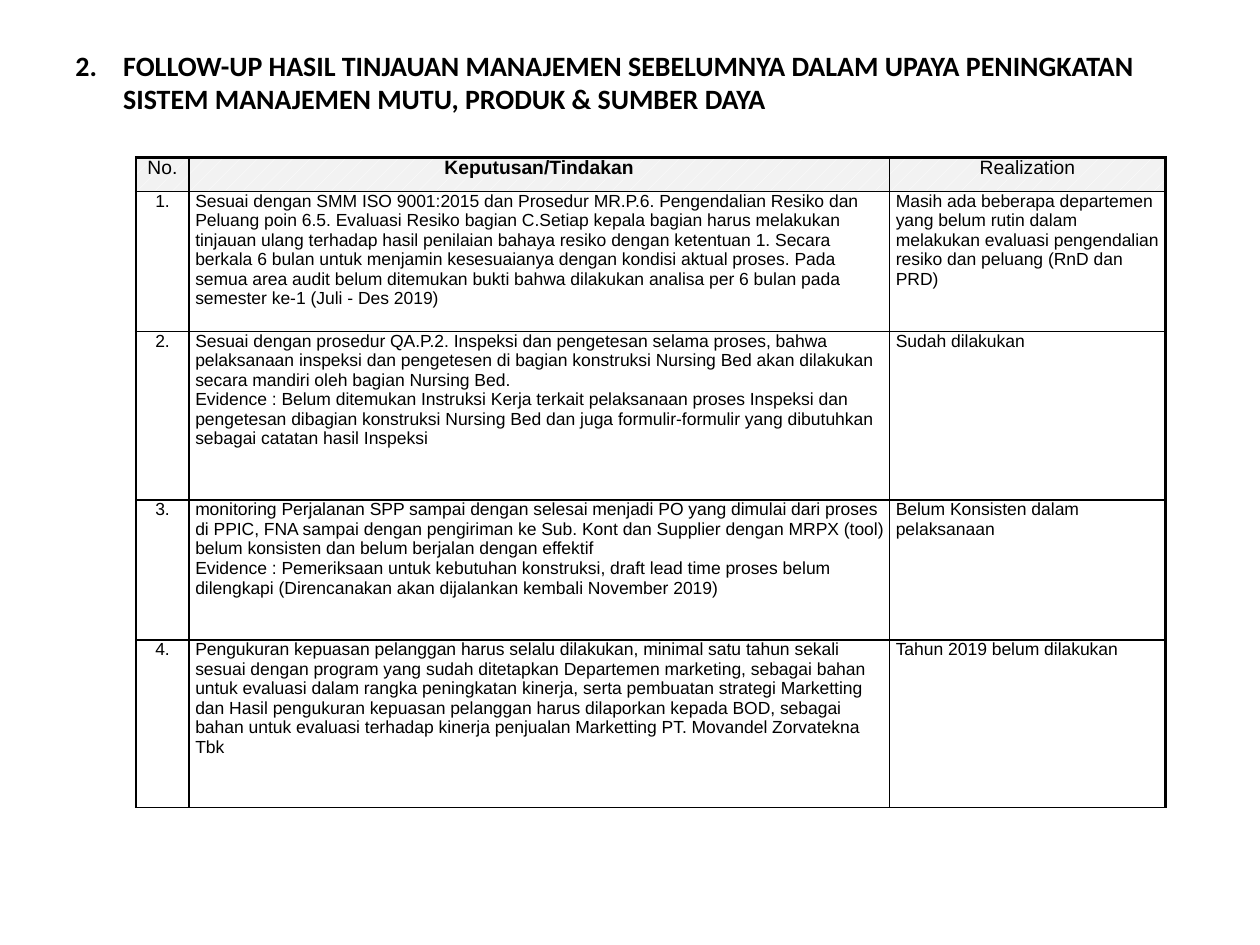
import pptx
import pptx.dml.color
import pptx.enum.dml
import pptx.enum.text
import pptx.oxml
import pptx.util
from pptx.oxml.ns import nsdecls
from pptx.util import Inches, Pt

BLACK = pptx.dml.color.RGBColor(0x00, 0x00, 0x00)
WHITE = pptx.dml.color.RGBColor(0xFF, 0xFF, 0xFF)
HEADER_GREY = pptx.dml.color.RGBColor(0xF2, 0xF2, 0xF2)
CENTER = pptx.enum.text.PP_ALIGN.CENTER
LEFT = pptx.enum.text.PP_ALIGN.LEFT

TITLE = ("FOLLOW-UP HASIL TINJAUAN MANAJEMEN SEBELUMNYA DALAM UPAYA PENINGKATAN "
         "SISTEM MANAJEMEN MUTU, PRODUK & SUMBER DAYA")
TITLE_NUMBER = 2
HEADERS = ["No.", "Keputusan/Tindakan", "Realization"]
DECISIONS = [
    ("Sesuai dengan SMM ISO 9001:2015 dan Prosedur MR.P.6. Pengendalian Resiko dan "
     "Peluang poin 6.5. Evaluasi Resiko bagian C.Setiap kepala bagian harus melakukan "
     "tinjauan ulang terhadap hasil penilaian bahaya resiko dengan ketentuan 1. Secara "
     "berkala 6 bulan untuk menjamin kesesuaianya dengan kondisi aktual proses. Pada "
     "semua area audit belum ditemukan bukti bahwa dilakukan analisa per 6 bulan pada "
     "semester ke-1 (Juli - Des 2019)",
     "Masih ada beberapa departemen yang belum rutin dalam melakukan evaluasi "
     "pengendalian resiko dan peluang (RnD dan PRD)"),
    ("Sesuai dengan prosedur QA.P.2. Inspeksi dan pengetesan selama proses, bahwa "
     "pelaksanaan inspeksi dan pengetesen di bagian konstruksi Nursing Bed akan dilakukan "
     "secara mandiri oleh bagian Nursing Bed.\n"
     "Evidence : Belum ditemukan Instruksi Kerja terkait pelaksanaan proses Inspeksi dan "
     "pengetesan dibagian konstruksi Nursing Bed dan juga formulir-formulir yang dibutuhkan "
     "sebagai catatan hasil Inspeksi",
     "Sudah dilakukan"),
    ("monitoring Perjalanan SPP sampai dengan selesai menjadi PO yang dimulai dari proses "
     "di PPIC, FNA sampai dengan pengiriman ke Sub. Kont dan Supplier dengan MRPX "
     "(tool) belum konsisten dan belum berjalan dengan effektif\n"
     "Evidence : Pemeriksaan untuk kebutuhan konstruksi, draft lead time proses belum "
     "dilengkapi (Direncanakan akan dijalankan kembali November 2019)",
     "Belum Konsisten dalam pelaksanaan"),
    ("Pengukuran kepuasan pelanggan harus selalu dilakukan, minimal satu tahun sekali "
     "sesuai dengan program yang sudah ditetapkan Departemen marketing, sebagai bahan "
     "untuk evaluasi dalam rangka peningkatan kinerja, serta pembuatan strategi Marketting "
     "dan Hasil pengukuran kepuasan pelanggan harus dilaporkan kepada BOD, sebagai "
     "bahan untuk evaluasi terhadap kinerja penjualan Marketting PT. Movandel Zorvatekna "
     "Tbk",
     "Tahun 2019 belum dilakukan"),
]
COLUMN_WIDTHS = [0.42, 5.56, 2.19]
ROW_HEIGHTS = [0.27, 1.11, 1.34, 1.11, 1.33]
TABLE_LEFT, TABLE_TOP = 1.08, 1.25
THICK, THIN = 1.5, 1


def set_borders(cell, **widths):
    """Draw black cell borders; widths are points keyed by L, R, T and B."""
    properties = cell._tc.get_or_add_tcPr()
    for index, side in enumerate("LRTB"):
        properties.insert(index, pptx.oxml.parse_xml(
            f'<a:ln{side} {nsdecls("a")} w="{Pt(widths[side])}">'
            f'<a:solidFill><a:srgbClr val="{BLACK}"/></a:solidFill></a:ln{side}>'))


def add_title(page):
    box = page.shapes.add_textbox(Inches(0.5), Inches(0.3), Inches(9), Inches(0.7))
    frame = box.text_frame
    frame.word_wrap = True
    frame.vertical_anchor = pptx.enum.text.MSO_ANCHOR.MIDDLE
    para = frame.paragraphs[0]
    para.text = TITLE
    para.font.name, para.font.size, para.font.bold = "Calibri", Pt(16), True
    para.font.color.rgb = BLACK
    properties = para._p.get_or_add_pPr()
    properties.set("marL", str(Inches(0.38)))
    properties.set("indent", str(-Inches(0.38)))
    properties.insert(0, pptx.oxml.parse_xml(
        f'<a:buAutoNum {nsdecls("a")} type="arabicPeriod" startAt="{TITLE_NUMBER}"/>'))


def fill_cell(cell, text, is_header, is_centered):
    cell.margin_left = cell.margin_right = Inches(0.05)
    cell.margin_top = cell.margin_bottom = 0
    cell.text = text
    for para in cell.text_frame.paragraphs:
        para.alignment = CENTER if is_centered else LEFT
        para.font.name = "Arial"
        para.font.size = Pt(11 if is_header else 10)
        para.font.bold = text == HEADERS[1]
        para.font.color.rgb = BLACK
    if is_header:
        cell.fill.patterned()
        cell.fill.pattern = pptx.enum.dml.MSO_PATTERN.PERCENT_5
        cell.fill.fore_color.rgb = WHITE
        cell.fill.back_color.rgb = HEADER_GREY
    else:
        cell.fill.background()


def add_decision_table(page):
    rows = [HEADERS] + [(f"{number}.", *decision)
                        for number, decision in enumerate(DECISIONS, 1)]
    table = page.shapes.add_table(
        len(rows), len(HEADERS), Inches(TABLE_LEFT), Inches(TABLE_TOP),
        Inches(sum(COLUMN_WIDTHS)), Inches(sum(ROW_HEIGHTS))).table
    table.first_row = table.horz_banding = False
    for column, width in zip(table.columns, COLUMN_WIDTHS):
        column.width = Inches(width)
    for row, height in zip(table.rows, ROW_HEIGHTS):
        row.height = Inches(height)
    last = len(HEADERS) - 1
    for r, texts in enumerate(rows):
        for c, text in enumerate(texts):
            cell = table.cell(r, c)
            fill_cell(cell, text, r == 0, r == 0 or c == 0)
            set_borders(cell, L=THICK if c == 0 else THIN, R=THICK if c == last else THIN,
                        T=THICK if r == 0 else THIN, B=THIN)


def main():
    deck = pptx.Presentation()
    deck.slide_width, deck.slide_height = Inches(10), Inches(7.5)
    page = deck.slides.add_slide(deck.slide_layouts[6])
    add_title(page)
    add_decision_table(page)
    deck.save("out.pptx")


if __name__ == "__main__":
    main()
